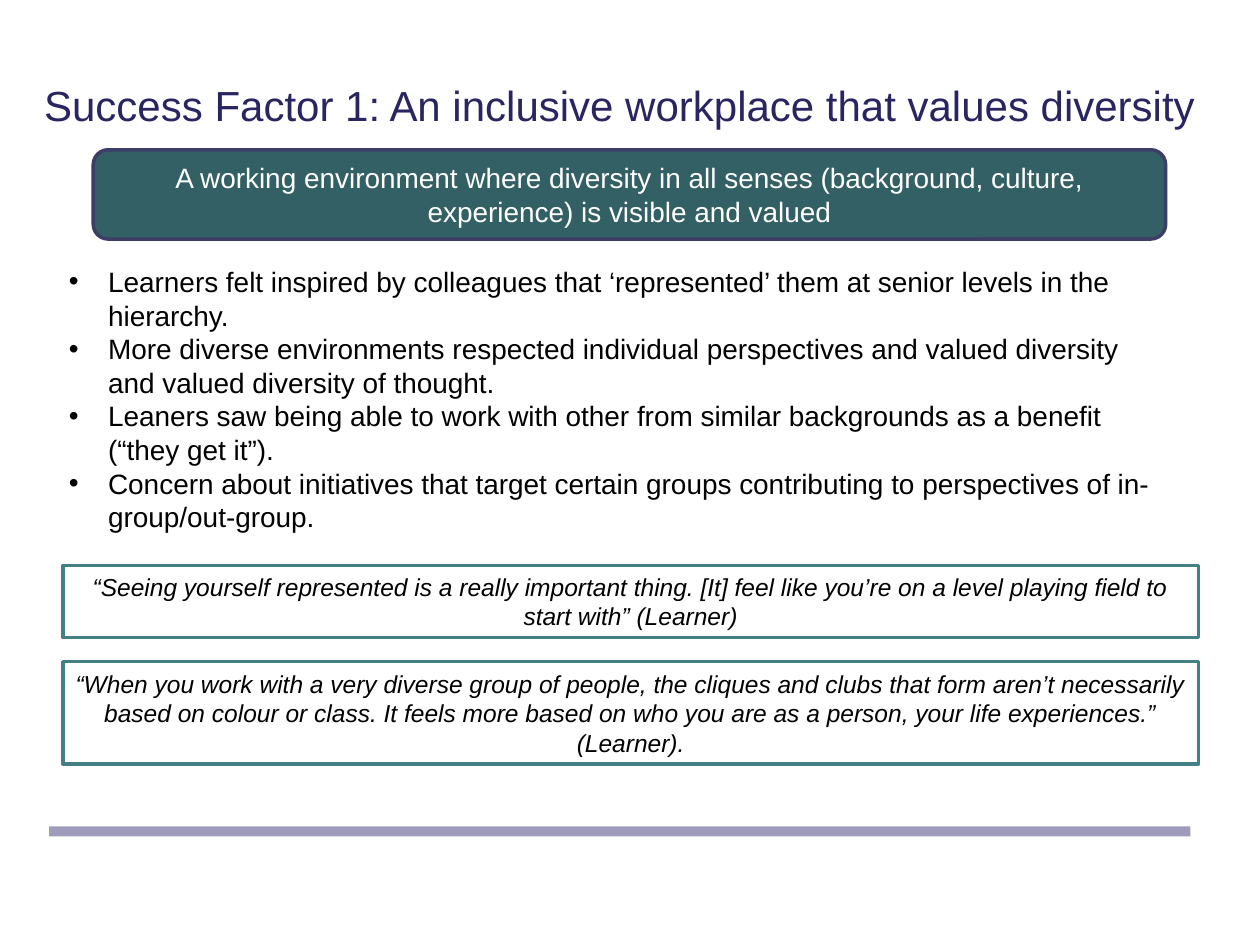
"""Build the slide on an inclusive workplace that values diversity."""
from dataclasses import dataclass
from typing import Optional

from lxml import etree
from pptx import Presentation
from pptx import util as u
from pptx.dml.color import RGBColor
from pptx.enum import shapes, text
from pptx.oxml.ns import qn

INDIGO = RGBColor(0x28, 0x25, 0x61)
LAVENDER = RGBColor(0x9E, 0x9C, 0xBA)
DARK_TEAL = RGBColor(0x32, 0x60, 0x65)
TEAL = RGBColor(0x43, 0x80, 0x86)
SLATE = RGBColor(0x3D, 0x3E, 0x66)
WHITE = RGBColor(0xFF, 0xFF, 0xFF)
BLACK = RGBColor(0, 0, 0)

RECT = shapes.MSO_SHAPE.RECTANGLE
ROUNDED = shapes.MSO_SHAPE.ROUNDED_RECTANGLE
LEFT, CENTER = text.PP_ALIGN.LEFT, text.PP_ALIGN.CENTER
TOP, MIDDLE = text.MSO_ANCHOR.TOP, text.MSO_ANCHOR.MIDDLE
BULLET_INDENT = u.Cm(0.79)


@dataclass
class Box:
    """A panel or text area, with lengths in centimetres."""
    at: tuple[float, float, float, float]
    paragraphs: tuple[str, ...] = ()
    size: int = 16
    color: RGBColor = BLACK
    italic: bool = False
    align: text.PP_ALIGN = CENTER
    anchor: text.MSO_ANCHOR = MIDDLE
    bullets: bool = False
    preset: Optional[shapes.MSO_SHAPE] = None
    fill: RGBColor = WHITE
    line: Optional[RGBColor] = None


def quote(top: float, height: float, words: str) -> Box:
    """Describe a framed learner quotation."""
    return Box((1.27, top, 22.89, height), (words,), 14, italic=True,
               preset=RECT, line=TEAL)


BOXES = (
    Box((0.99, 16.66, 23.01, 0.2), preset=RECT, fill=LAVENDER),
    Box((0.64, 0.53, 24.13, 3.18),
        ("Success Factor 1: An inclusive workplace that values diversity",),
        24, INDIGO, align=LEFT),
    Box((1.88, 3.02, 21.62, 1.8),
        ("A working environment where diversity in all senses (background, "
         "culture, experience) is visible and valued",),
        color=WHITE, preset=ROUNDED, fill=DARK_TEAL, line=SLATE),
    Box((1.14, 5.21, 22.66, 5.74),
        ("Learners felt inspired by colleagues that ‘represented’ them at "
         "senior levels in the hierarchy.",
         "More diverse environments respected individual perspectives and "
         "valued diversity and valued diversity of thought.",
         "Leaners saw being able to work with other from similar backgrounds "
         "as a benefit (“they get it”).",
         "Concern about initiatives that target certain groups contributing "
         "to perspectives of in-group/out-group."),
        align=LEFT, anchor=TOP, bullets=True),
    quote(11.4, 1.45,
          "“Seeing yourself represented is a really important thing. [It] feel "
          "like you’re on a level playing field to start with” (Learner)"),
    quote(13.34, 2.06,
          "“When you work with a very diverse group of people, the cliques and "
          "clubs that form aren’t necessarily based on colour or class. It "
          "feels more based on who you are as a person, your life "
          "experiences.” (Learner)."),
)


def add_bullet(p) -> None:
    """Give a paragraph a round bullet and a hanging indent."""
    pPr = p._p.get_or_add_pPr()
    pPr.set("marL", str(BULLET_INDENT))
    pPr.set("indent", str(-BULLET_INDENT))
    etree.SubElement(pPr, qn("a:buFont")).set("typeface", "Arial")
    etree.SubElement(pPr, qn("a:buChar")).set("char", "•")


def write_text(tf, box: Box) -> None:
    """Fill a text frame with the paragraphs of a box."""
    tf.word_wrap = True
    tf.vertical_anchor = box.anchor
    formats = {"name": "Arial", "size": u.Pt(box.size), "italic": box.italic}
    for i, words in enumerate(box.paragraphs):
        p = tf.add_paragraph() if i else tf.paragraphs[0]
        p.alignment = box.align
        if box.bullets:
            add_bullet(p)
        r = p.add_run()
        r.text = words
        for name, value in formats.items():
            setattr(r.font, name, value)
        r.font.color.rgb = box.color


def draw_box(s, box: Box) -> None:
    """Draw a box as a preset shape or a plain text box."""
    at = [u.Cm(length) for length in box.at]
    if box.preset is None:
        sp = s.shapes.add_textbox(*at)
    else:
        sp = s.shapes.add_shape(box.preset, *at)
        sp.shadow.inherit = False
        sp.fill.solid()
        sp.fill.fore_color.rgb = box.fill
        if box.line is None:
            sp.line.fill.background()
        else:
            sp.line.color.rgb = box.line
            sp.line.width = u.Pt(2)
    if box.paragraphs:
        write_text(sp.text_frame, box)


def main() -> None:
    """Build and save the presentation."""
    prs = Presentation()
    prs.slide_width, prs.slide_height = u.Cm(25.4), u.Cm(19.05)
    s = prs.slides.add_slide(prs.slide_layouts[6])
    for box in BOXES:
        draw_box(s, box)
    prs.save("out.pptx")


if __name__ == "__main__":
    main()
